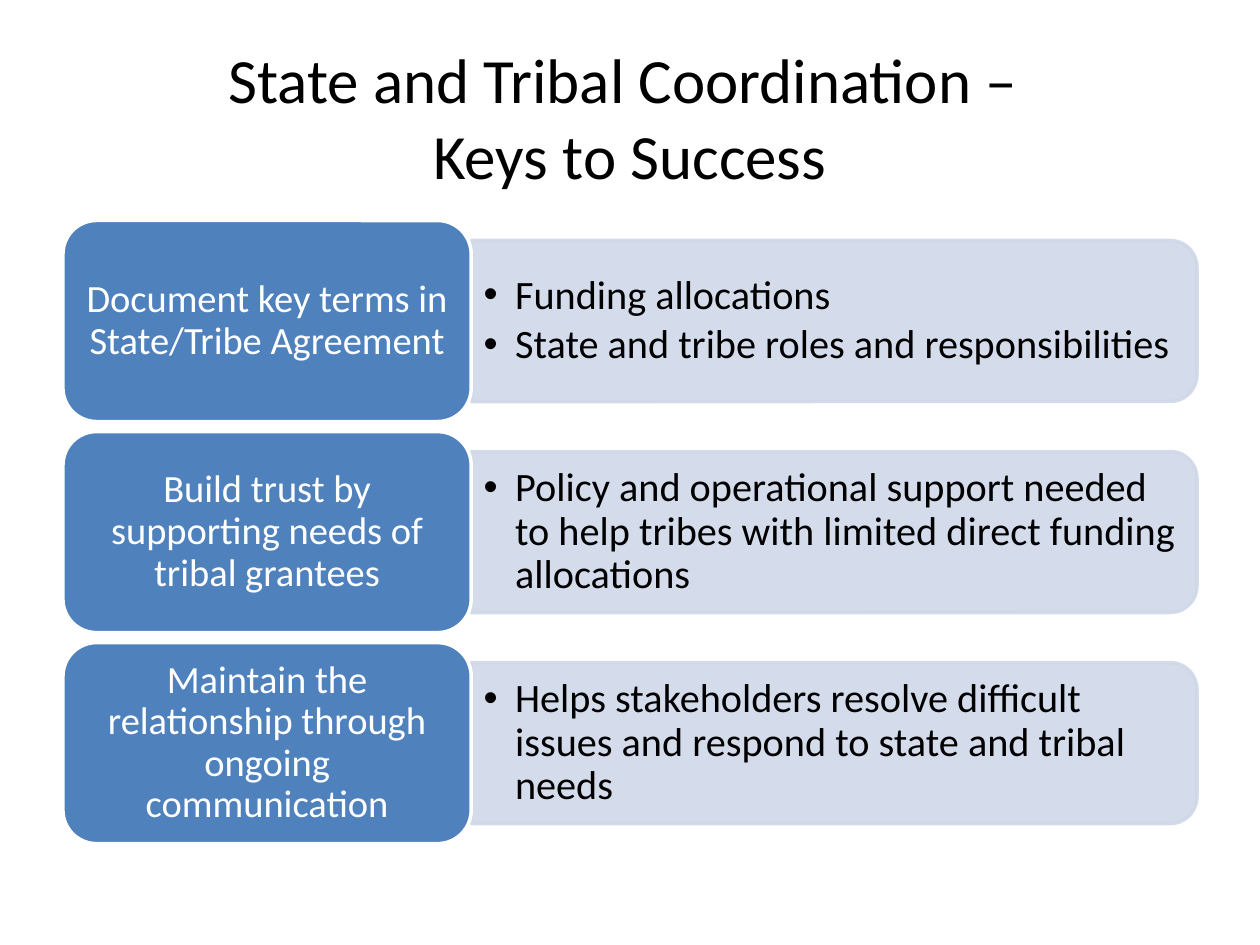
from lxml import etree
from pptx import Presentation
from pptx import util as u
from pptx.dml.color import RGBColor
from pptx.enum import shapes, text
from pptx.oxml import ns

Pt = u.Pt
BLUE = RGBColor(0x4F, 0x81, 0xBD)
PALE_BLUE = RGBColor(0xD0, 0xD8, 0xE8)
BLACK = RGBColor(0, 0, 0)
WHITE = RGBColor(255, 255, 255)

TITLE = "State and Tribal Coordination – \vKeys to Success"
KEYS = [
    ("Document key terms in State/Tribe Agreement",
     ["Funding allocations", "State and tribe roles and responsibilities"]),
    ("Build trust by supporting needs of tribal grantees",
     ["Policy and operational support needed to help tribes with limited "
      "direct funding allocations"]),
    ("Maintain the relationship through ongoing communication",
     ["Helps stakeholders resolve difficult issues and respond to state "
      "and tribal needs"]),
]

LEFT, TOP, PITCH = 36, 126, 120.6
LABEL_W, LABEL_H = 233.28, 114.9
PANEL_W, PANEL_H = 414.72, 92
DETAIL_W, DETAIL_H = 410.4, 83


def write(frame, lines, *, size, color, align=text.PP_ALIGN.LEFT,
          spacing=1.0, after=0, bullet_indent=0, inset=(7.2, 3.6)):
    """Fill a text frame with one paragraph per line."""
    frame.word_wrap = True
    frame.vertical_anchor = text.MSO_ANCHOR.MIDDLE
    frame.margin_left = frame.margin_right = Pt(inset[0])
    frame.margin_top = frame.margin_bottom = Pt(inset[1])
    for index, line in enumerate(lines):
        paragraph = frame.add_paragraph() if index else frame.paragraphs[0]
        paragraph.text = line
        paragraph.alignment = align
        paragraph.line_spacing = spacing
        paragraph.space_after = Pt(after)
        for run in paragraph.runs:
            run.font.name = "Calibri"
            run.font.size = Pt(size)
            run.font.color.rgb = color
        if bullet_indent:
            props = paragraph._p.get_or_add_pPr()
            props.set("marL", str(Pt(bullet_indent)))
            props.set("indent", str(-Pt(bullet_indent)))
            etree.SubElement(props, ns.qn("a:buFont"), typeface="Arial")
            etree.SubElement(props, ns.qn("a:buChar"), char="•")


def set_alpha(fill, percent):
    color = fill._xPr.find(f"{ns.qn('a:solidFill')}/{ns.qn('a:srgbClr')}")
    etree.SubElement(color, ns.qn("a:alpha"), val=str(percent * 1000))


class KeysSlide:
    def __init__(self, slide):
        self.slide = slide

    def text_box(self, x, y, w, h, lines, **style):
        box = self.slide.shapes.add_textbox(Pt(x), Pt(y), Pt(w), Pt(h))
        write(box.text_frame, lines, **style)

    def block(self, preset, x, y, w, h, fill, line):
        block = self.slide.shapes.add_shape(preset, Pt(x), Pt(y), Pt(w), Pt(h))
        block.shadow.inherit = False
        block.fill.solid()
        block.fill.fore_color.rgb = fill
        block.line.color.rgb = line
        block.line.width = Pt(2)
        return block

    def panel(self, x, y):
        """Pale strip rounded on its right side, made by a quarter turn."""
        shift = (PANEL_W - PANEL_H) / 2
        strip = self.block(shapes.MSO_SHAPE.ROUND_2_SAME_RECTANGLE,
                           x + shift, y - shift, PANEL_H, PANEL_W,
                           PALE_BLUE, PALE_BLUE)
        strip.rotation = 90
        for fill in (strip.fill, strip.line.fill):
            set_alpha(fill, 90)

    def label(self, x, y, caption):
        label = self.block(shapes.MSO_SHAPE.ROUNDED_RECTANGLE, x, y,
                           LABEL_W, LABEL_H, BLUE, WHITE)
        write(label.text_frame, [caption], size=22, color=WHITE,
              align=text.PP_ALIGN.CENTER, spacing=0.9, after=7.7,
              inset=(6.6, 3.3))

    def key(self, y, caption, details):
        middle = y + LABEL_H / 2
        detail_x = LEFT + LABEL_W
        self.panel(detail_x, middle - PANEL_H / 2)
        self.text_box(detail_x, middle - DETAIL_H / 2, DETAIL_W, DETAIL_H,
                      details, size=23, color=BLACK, spacing=0.9, after=3.45,
                      bullet_indent=18)
        self.label(LEFT, y, caption)


def main():
    deck = Presentation()
    deck.slide_width, deck.slide_height = Pt(720), Pt(540)
    page = KeysSlide(deck.slides.add_slide(deck.slide_layouts[6]))
    page.text_box(LEFT, 21.6, 648, 90, [TITLE], size=36, color=BLACK,
                  align=text.PP_ALIGN.CENTER)
    for row, (caption, details) in enumerate(KEYS):
        page.key(TOP + row * PITCH, caption, details)
    deck.save("out.pptx")


if __name__ == "__main__":
    main()
